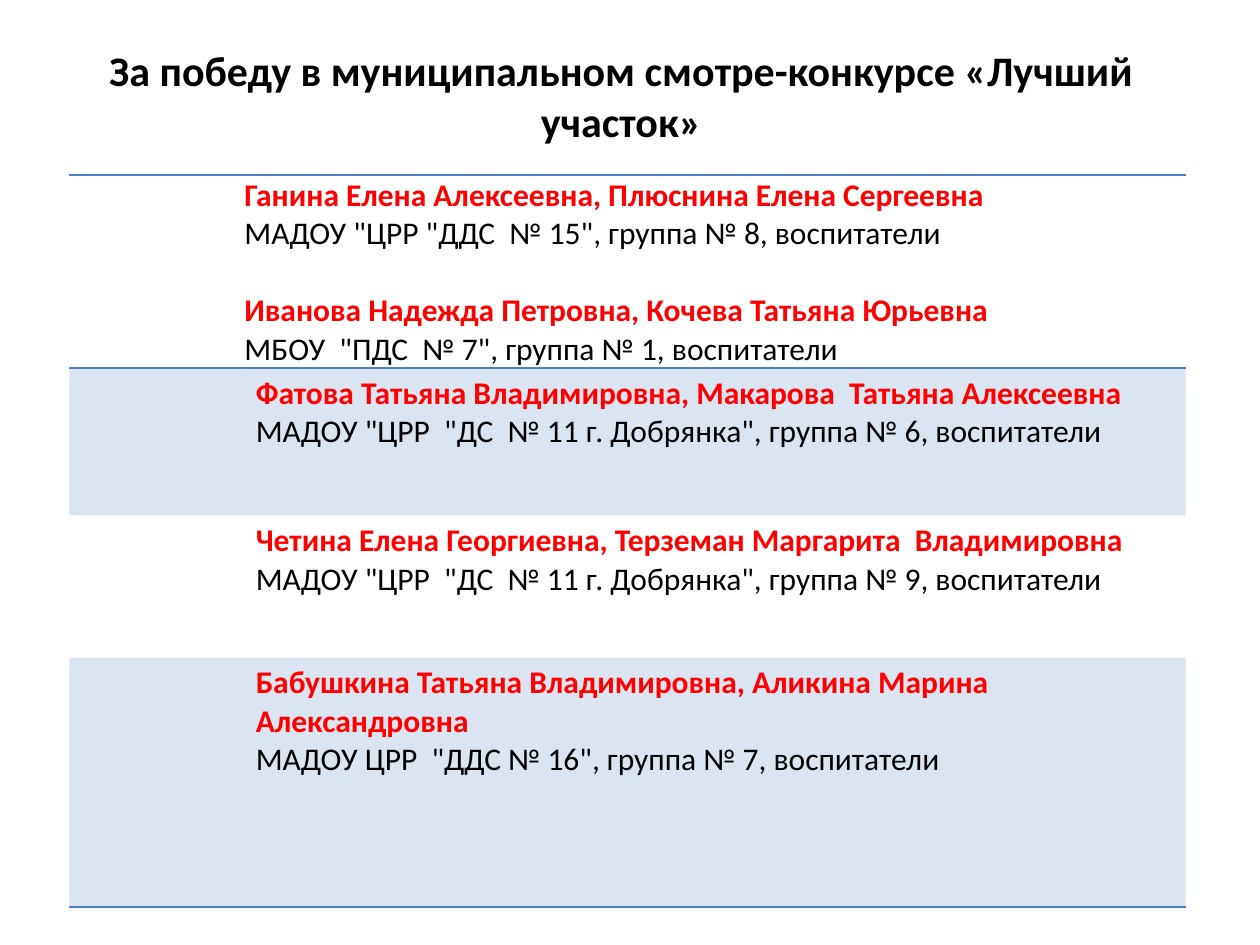
from dataclasses import dataclass

from lxml import etree
from pptx import Presentation
from pptx.dml.color import RGBColor
from pptx.enum.text import MSO_ANCHOR, PP_ALIGN
from pptx.oxml.ns import qn
from pptx.util import Inches, Pt

CENTER, LEFT = PP_ALIGN.CENTER, PP_ALIGN.LEFT
MIDDLE = MSO_ANCHOR.MIDDLE
NO_STYLE = "{2D5ABB26-0587-4C30-8999-92F81FD0307C}"


@dataclass(frozen=True)
class Theme:
    font: str = "Calibri"
    text: str = "000000"
    name: str = "FF0000"
    accent: str = "4F81BD"
    band_alpha: int = 20000
    title_size: int = 24
    body_size: int = 18


theme = Theme()


def write(para, text, *, size=theme.body_size, color=theme.text, bold=False,
          align=LEFT, before=0):
    para.alignment = align
    para.space_before = Pt(before)
    span = para.add_run()
    span.text = text
    span.font.name = theme.font
    span.font.size = Pt(size)
    span.font.bold = bold
    span.font.color.rgb = RGBColor.from_string(color)


def add_border(cell, side):
    line = etree.SubElement(cell._tc.get_or_add_tcPr(), qn(f"a:{side}"), w=str(Pt(1)))
    fill = etree.SubElement(line, qn("a:solidFill"))
    etree.SubElement(fill, qn("a:srgbClr"), val=theme.accent)


deck = Presentation()
deck.slide_width, deck.slide_height = Inches(10), Inches(7.5)
page = deck.slides.add_slide(deck.slide_layouts[6])

# Title
box = page.shapes.add_textbox(Inches(0.43), Inches(0.13), Inches(9), Inches(1.25))
frame = box.text_frame
frame.word_wrap = True
frame.vertical_anchor = MIDDLE
write(frame.paragraphs[0], "За победу в муниципальном смотре-конкурсе «Лучший участок»",
      size=theme.title_size, bold=True, align=CENTER)

# Winners: each row holds pairs of names and workplace
winners = [
    [("Ганина Елена Алексеевна, Плюснина Елена Сергеевна",
      'МАДОУ "ЦРР "ДДС  № 15", группа № 8, воспитатели'),
     ("Иванова Надежда Петровна, Кочева Татьяна Юрьевна",
      'МБОУ  "ПДС  № 7", группа № 1, воспитатели')],
    [("Фатова Татьяна Владимировна, Макарова  Татьяна Алексеевна",
      'МАДОУ "ЦРР  "ДС  № 11 г. Добрянка", группа № 6, воспитатели')],
    [("Четина Елена Георгиевна, Терземан Маргарита  Владимировна",
      'МАДОУ "ЦРР  "ДС  № 11 г. Добрянка", группа № 9, воспитатели')],
    [("Бабушкина Татьяна Владимировна, Аликина Марина  Александровна",
      'МАДОУ ЦРР  "ДДС № 16", группа № 7, воспитатели')],
]
column_widths = [1.38, 7.48]
row_heights = [1.53, 1.17, 1.13, 1.98]
borders = {0: ["lnT", "lnB"], 3: ["lnB"]}

# Table
table_frame = page.shapes.add_table(
    len(winners), len(column_widths), Inches(0.55), Inches(1.39),
    Inches(sum(column_widths)), Inches(sum(row_heights)))
table = table_frame.table
table.first_row = table.horz_banding = False
table._tbl.tblPr.find(qn("a:tableStyleId")).text = NO_STYLE
for column, width in zip(table.columns, column_widths):
    column.width = Inches(width)

for index, (row, height, pairs) in enumerate(zip(table.rows, row_heights, winners)):
    row.height = Inches(height)

    # Rules and banding
    for cell in row.cells:
        for side in borders.get(index, []):
            add_border(cell, side)
        if index % 2:
            cell.fill.solid()
            cell.fill.fore_color.rgb = RGBColor.from_string(theme.accent)
            color = cell._tc.tcPr.find(qn("a:solidFill")).find(qn("a:srgbClr"))
            etree.SubElement(color, qn("a:alpha"), val=str(theme.band_alpha))
        else:
            cell.fill.background()

    # Names and workplaces
    cell = row.cells[1]
    if index == 0:
        cell.margin_left = cell.margin_top = cell.margin_right = Inches(0.01)
        cell.margin_bottom = 0
    for number, (names, workplace) in enumerate(pairs):
        frame = cell.text_frame
        para = frame.add_paragraph() if number else frame.paragraphs[0]
        write(para, names, color=theme.name, bold=True, before=22 * number)
        write(frame.add_paragraph(), workplace)

deck.save("out.pptx")
